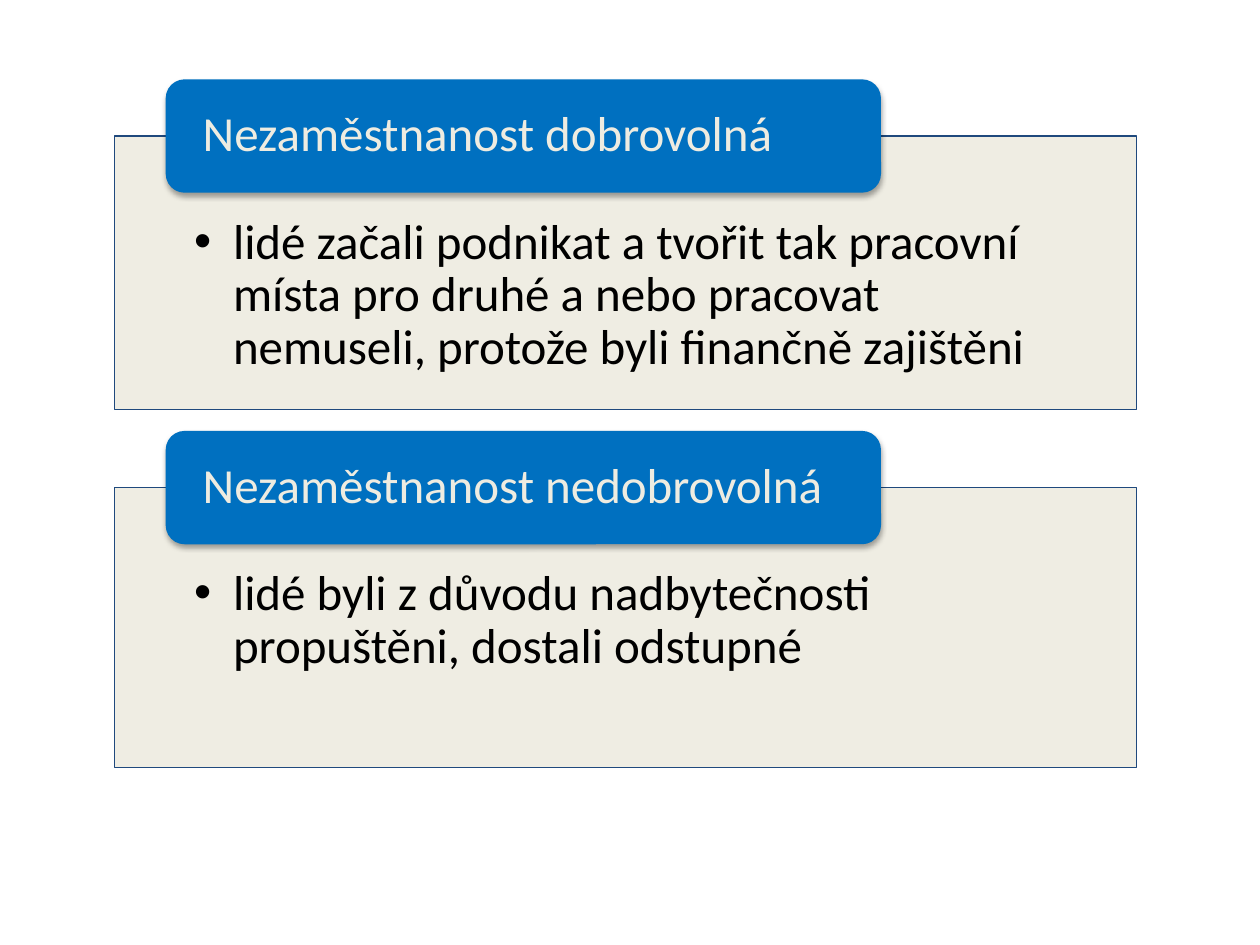
from dataclasses import dataclass

from lxml.etree import SubElement
from pptx import Presentation
from pptx.dml.color import RGBColor as RGB
from pptx.enum.shapes import MSO_SHAPE as Shape
from pptx.enum.text import MSO_ANCHOR as Anchor, PP_ALIGN as Align
from pptx.oxml.ns import qn
from pptx.util import Inches, Pt


@dataclass(frozen=True)
class Theme:
    font: str = "Calibri"
    size: int = 28
    panel: str = "EEECE1"
    outline: str = "1F497D"
    header: str = "0070C0"
    body_text: str = "000000"
    header_text: str = "EEECE1"
    shadow: str = "000000"


@dataclass(frozen=True)
class Section:
    title: str
    body: str
    top: float  # top of the panel, inches
    height: float


THEME = Theme()
WIDTH, HEIGHT = 10, 7.5
PANEL_LEFT, PANEL_WIDTH = 0.091 * WIDTH, 0.811 * WIDTH
HEADER_LEFT = PANEL_LEFT + PANEL_WIDTH * 0.05
HEADER_WIDTH, HEADER_HEIGHT = PANEL_WIDTH * 0.7, 0.12 * HEIGHT
INDENT = 0.31

SECTIONS = (
    Section("Nezaměstnanost dobrovolná",
            "lidé začali podnikat a tvořit tak pracovní místa pro druhé a nebo "
            "pracovat nemuseli, protože byli finančně zajištěni", 1.08, 2.17),
    Section("Nezaměstnanost nedobrovolná",
            "lidé byli z důvodu nadbytečnosti propuštěni, dostali odstupné",
            3.87, 2.22),
)


def add_box(s, kind: Shape, box: tuple, fill: str):
    sp = s.shapes.add_shape(kind, *map(Inches, box))
    sp.shadow.inherit = False
    sp.fill.solid()
    sp.fill.fore_color.rgb = RGB.from_string(fill)
    return sp


def add_text(sp, text: str, color: str, insets: tuple, anchor: Anchor, after: float):
    tf = sp.text_frame
    tf.word_wrap = True
    tf.vertical_anchor = anchor
    (tf.margin_left, tf.margin_top,
     tf.margin_right, tf.margin_bottom) = map(Inches, insets)
    p = tf.paragraphs[0]
    p.alignment = Align.LEFT
    p.line_spacing = 0.9
    p.space_after = Pt(after)
    r = p.add_run()
    r.text = text
    r.font.name, r.font.size = THEME.font, Pt(THEME.size)
    r.font.color.rgb = RGB.from_string(color)
    return p


def add_bullet(p) -> None:
    pPr = p._p.get_or_add_pPr()
    pPr.set("marL", str(Inches(INDENT)))
    pPr.set("indent", str(-Inches(INDENT)))
    SubElement(pPr, qn("a:buFont"), typeface="Arial")
    SubElement(pPr, qn("a:buChar"), char="•")


def add_alpha(color, percent: int) -> None:
    SubElement(color, qn("a:alpha"), val=str(percent * 1000))


def add_shadow(sp) -> None:
    effects = sp._element.spPr.find(qn("a:effectLst"))
    shadow = SubElement(effects, qn("a:outerShdw"), blurRad=str(Pt(3.1)),
                        dist=str(Pt(1.8)), dir="5400000", rotWithShape="0")
    add_alpha(SubElement(shadow, qn("a:srgbClr"), val=THEME.shadow), 35)


def draw_section(s, section: Section) -> None:
    # Outlined panel with the bulleted explanation
    panel = add_box(s, Shape.RECTANGLE,
                    (PANEL_LEFT, section.top, PANEL_WIDTH, section.height), THEME.panel)
    add_alpha(panel._element.spPr.find(f"{qn('a:solidFill')}/{qn('a:srgbClr')}"), 90)
    panel.line.color.rgb = RGB.from_string(THEME.outline)
    panel.line.width = Pt(0.75)
    add_bullet(add_text(panel, section.body, THEME.body_text,
                        (0.63, 0.64, 0.63, 0.22), Anchor.TOP, THEME.size * 0.15))

    # Rounded header centred on the panel's top edge
    header = add_box(s, Shape.ROUNDED_RECTANGLE,
                     (HEADER_LEFT, section.top - HEADER_HEIGHT / 2,
                      HEADER_WIDTH, HEADER_HEIGHT), THEME.header)
    header.line.fill.background()
    add_shadow(header)
    add_text(header, section.title, THEME.header_text,
             (0.25, 0, 0.25, 0), Anchor.MIDDLE, THEME.size * 0.35)


def main() -> None:
    prs = Presentation()
    prs.slide_width, prs.slide_height = Inches(WIDTH), Inches(HEIGHT)
    s = prs.slides.add_slide(prs.slide_layouts[6])
    for section in SECTIONS:
        draw_section(s, section)
    prs.save("out.pptx")


if __name__ == "__main__":
    main()
